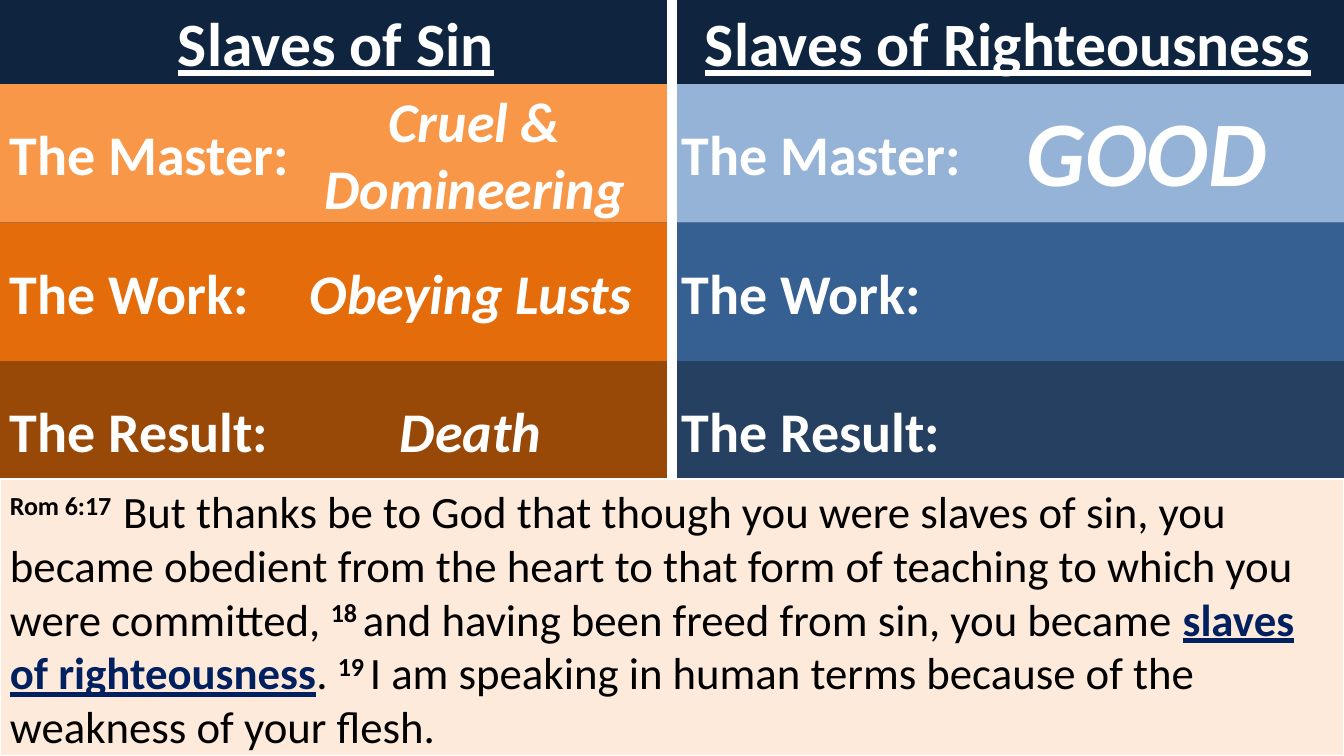
from dataclasses import dataclass

from lxml import etree
from pptx import Presentation
from pptx import util as u
from pptx.dml.color import RGBColor
from pptx.enum import shapes, text
from pptx.oxml.ns import qn

# Grid: 320 columns by 180 rows over the whole slide
COLS, ROWS = 320, 180
HALF = COLS // 2
HEADER_ROWS, CARD_ROWS, VERSE_ROW = 20, 33, 114
ANSWER_ROWS = 31

COLORS = {
    "navy": "0F243E", "white": "FFFFFF", "black": "000000",
    "master_sin": "F79747", "work_sin": "E46C0A", "result_sin": "984807",
    "master_right": "95B3D7", "work_right": "376092", "result_right": "254061",
    "verse": "FDEADA", "emphasis": "002060",
}


@dataclass
class Card:
    label: str
    color: str


@dataclass
class Column:
    heading: str
    cards: list[Card]


@dataclass
class Answer:
    words: str
    col: float
    row: float
    cols: float
    size: float = 40


COLUMNS = [
    Column("Slaves of Sin", [
        Card("The Master:", "master_sin"),
        Card("The Work:", "work_sin"),
        Card("The Result:", "result_sin")]),
    Column("Slaves of Righteousness", [
        Card("The Master:", "master_right"),
        Card("The Work:", "work_right"),
        Card("The Result:", "result_right")]),
]
ANSWERS = [
    Answer("Cruel & Domineering", 70, 21, 86),
    Answer("Obeying Lusts", 68, 54, 88),
    Answer("Death", 68, 87, 88),
    Answer("GOOD", 230, 20, 86, size=66),
]
NUMBER = {"bold": True, "raised": True}
VERSE = [
    ("Rom 6:17  ", NUMBER),
    ("But thanks be to God that though you were slaves of sin, you became obedient "
     "from the heart to that form of teaching to which you were committed, ", {}),
    ("18 ", NUMBER),
    ("and having been freed from sin, you became ", {}),
    ("slaves of righteousness", {"bold": True, "underline": True, "color": "emphasis"}),
    (". ", {}),
    ("19 ", NUMBER),
    ("I am speaking in human terms because of the weakness of your flesh.", {}),
]

prs = Presentation()
prs.slide_width, prs.slide_height = u.Inches(COLS / 24), u.Inches(ROWS / 24)


def x(col: float) -> int:
    return round(prs.slide_width * col / COLS)


def y(row: float) -> int:
    return round(prs.slide_height * row / ROWS)


def rgb(name: str) -> RGBColor:
    return RGBColor.from_string(COLORS[name])


def add_text(p, words: str, *, size: float = 40, color: str = "white",
             bold: bool = False, italic: bool = False, underline: bool = False,
             raised: bool = False) -> None:
    r = p.add_run()
    r.text = words
    f = r.font
    f.name, f.size = "Calibri", u.Pt(size)
    f.bold, f.italic, f.underline = bold, italic, underline
    f.color.rgb = rgb(color)
    if raised:
        r._r.get_or_add_rPr().set("baseline", "30000")


def first_paragraph(sp, *, anchor=text.MSO_ANCHOR.MIDDLE, align=text.PP_ALIGN.LEFT):
    tf = sp.text_frame
    tf.word_wrap, tf.auto_size = True, text.MSO_AUTO_SIZE.NONE
    tf.vertical_anchor = anchor
    p = tf.paragraphs[0]
    p.alignment, p.space_before = align, u.Pt(0)
    return p


def add_panel(s, col: float, row: float, cols: float, rows: float, color: str):
    sp = s.shapes.add_shape(shapes.MSO_SHAPE.RECTANGLE, x(col), y(row), x(cols), y(rows))
    sp.shadow.inherit = False
    sp.fill.solid()
    sp.fill.fore_color.rgb = rgb(color)
    sp.line.fill.background()
    return sp


def add_heading(sp, words: str, col: float) -> None:
    sp.left, sp.top, sp.width, sp.height = x(col), 0, x(HALF), y(26)
    p = first_paragraph(sp, anchor=text.MSO_ANCHOR.TOP, align=text.PP_ALIGN.CENTER)
    add_text(p, words, size=44, bold=True, underline=True)


def add_answer(s, a: Answer) -> None:
    sp = s.shapes.add_textbox(x(a.col), y(a.row), x(a.cols), y(ANSWER_ROWS))
    p = first_paragraph(sp, align=text.PP_ALIGN.CENTER)
    add_text(p, a.words, size=a.size, bold=True, italic=True)


def add_divider(s) -> None:
    line = s.shapes.add_connector(shapes.MSO_CONNECTOR.STRAIGHT,
                                  x(HALF), 0, x(HALF), y(176))
    line.line.color.rgb, line.line.width = rgb("white"), u.Pt(7.25)
    etree.SubElement(line._element.spPr, qn("a:effectLst"))


def main() -> None:
    # Comparison layout: its title and first text body hold the two headings
    s = prs.slides.add_slide(prs.slide_layouts[4])
    s.background.fill.solid()
    s.background.fill.fore_color.rgb = rgb("navy")
    headings = [s.shapes.title, s.placeholders[1]]
    for sp in list(s.placeholders):
        if sp.placeholder_format.idx > 1:
            sp._element.getparent().remove(sp._element)

    # Two columns of cards
    for i, column in enumerate(COLUMNS):
        add_heading(headings[i], column.heading, i * HALF)
        for j, card in enumerate(column.cards):
            sp = add_panel(s, i * HALF, HEADER_ROWS + j * CARD_ROWS,
                           HALF, CARD_ROWS, card.color)
            add_text(first_paragraph(sp), card.label, bold=True)

    # Divider, then the verse across the bottom
    add_divider(s)
    verse = add_panel(s, 0, VERSE_ROW, COLS, ROWS - VERSE_ROW, "verse")
    verse.line.color.rgb, verse.line.width = rgb("white"), u.Pt(1.5)
    p = first_paragraph(verse, anchor=text.MSO_ANCHOR.TOP)
    for words, style in VERSE:
        add_text(p, words, **{"size": 32, "color": "black", **style})

    # Answers beside the labels
    for answer in ANSWERS:
        add_answer(s, answer)

    prs.save("out.pptx")


if __name__ == "__main__":
    main()
